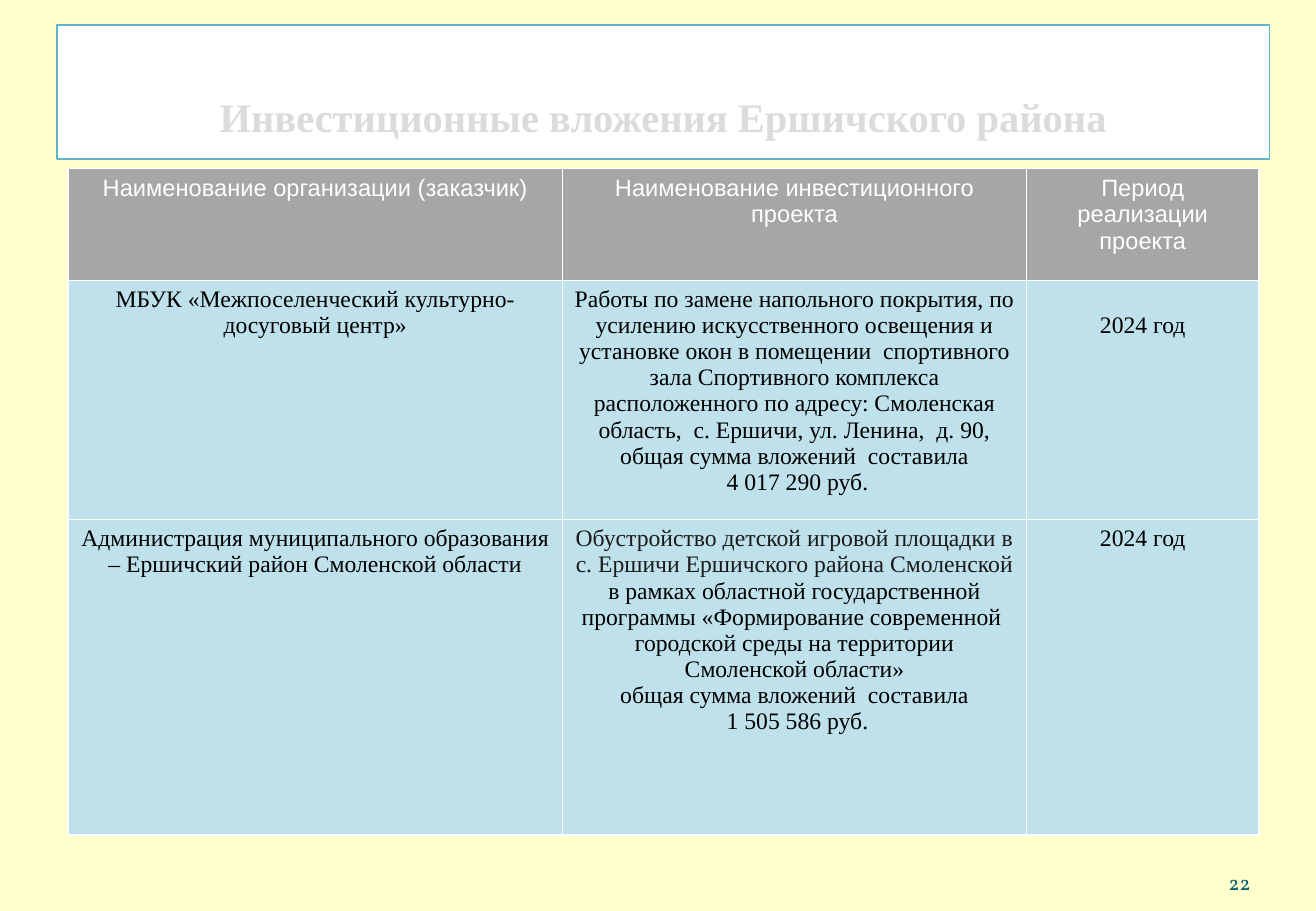
from dataclasses import dataclass

from lxml import etree
from pptx import Presentation
from pptx import util as u
from pptx.dml.color import RGBColor
from pptx.enum import shapes, text
from pptx.oxml import ns

COLORS = {
    "page": "FFFFCC",
    "white": "FFFFFF",
    "frame": "60B5CC",
    "title": "DBDBDD",
    "title_edge": "526080",
    "header": "A6A6A6",
    "body": "BFE1EB",
    "black": "000000",
    "soft_black": "1A1A1A",
    "number": "045D75",
}
SERIF = "Times New Roman"
COLUMNS = (10.34, 9.7, 4.86)
ROWS = (2.34, 4.9, 6.6)


@dataclass(frozen=True)
class Run:
    text: str
    color: str = "black"


@dataclass(frozen=True)
class Entry:
    paragraphs: tuple[tuple[Run, ...], ...]
    fill: str = "body"
    font: str = SERIF
    top: float = 0.13


def heading(label: str) -> Entry:
    return Entry(((Run(label, "white"),),), "header", "Arial")


def entry(*lines: str, top: float = 0.13) -> Entry:
    return Entry(tuple((Run(line),) for line in lines), top=top)


TABLE = (
    (
        heading("Наименование организации (заказчик)"),
        heading("Наименование инвестиционного проекта"),
        heading("Период реализации проекта"),
    ),
    (
        entry("МБУК «Межпоселенческий культурно-досуговый центр»"),
        entry(
            "Работы по замене напольного покрытия, по усилению искусственного "
            "освещения и установке окон в помещении  спортивного зала "
            "Спортивного комплекса расположенного по адресу: Смоленская "
            "область,  с. Ершичи, ул. Ленина,  д. 90, "
            "общая сумма вложений  составила",
            " 4 017 290 руб.",
        ),
        entry("2024 год", top=0.67),
    ),
    (
        entry("Администрация муниципального образования – Ершичский район Смоленской области"),
        Entry((
            (
                Run("Обустройство детской игровой площадки в с. Ершичи "
                    "Ершичского района Смоленской ", "soft_black"),
                Run("в рамках областной государственной программы «Формирование "
                    "современной  городской среды на территории Смоленской области»"),
            ),
            (Run("общая сумма вложений  составила"),),
            (Run(" 1 505 586 руб."),),
        )),
        entry("2024 год"),
    ),
)


def rgb(name: str) -> RGBColor:
    return RGBColor.from_string(COLORS[name])


def add_text(p, content: str, *, size: float = 14, font: str = SERIF,
             color: str = "black", bold: bool = False,
             align=text.PP_ALIGN.CENTER):
    p.alignment = align
    r = p.add_run()
    r.text = content
    r.font.size = u.Pt(size)
    r.font.name = font
    r.font.bold = bold
    r.font.color.rgb = rgb(color)
    return r


def make_line(tag: str, color: str, width: float):
    ln = etree.Element(ns.qn(tag), w=str(u.Pt(width)))
    fill = etree.SubElement(ln, ns.qn("a:solidFill"))
    etree.SubElement(fill, ns.qn("a:srgbClr"), val=COLORS[color])
    return ln


def set_margins(box, left: float, top: float, right: float, bottom: float) -> None:
    box.margin_left, box.margin_top = u.Cm(left), u.Cm(top)
    box.margin_right, box.margin_bottom = u.Cm(right), u.Cm(bottom)


def draw_title(s) -> None:
    sp = s.shapes.add_shape(shapes.MSO_SHAPE.RECTANGLE,
                            u.Cm(1.19), u.Cm(0.53), u.Cm(25.35), u.Cm(2.79))
    sp.shadow.inherit = False
    sp.fill.solid()
    sp.fill.fore_color.rgb = rgb("white")
    sp.line.color.rgb = rgb("frame")
    sp.line.width = u.Pt(1)
    tf = sp.text_frame
    tf.word_wrap = True
    tf.vertical_anchor = text.MSO_ANCHOR.BOTTOM
    set_margins(tf, 0.25, 0.13, 0.25, 0.37)
    r = add_text(tf.paragraphs[0], "Инвестиционные вложения Ершичского района",
                 size=24, color="title", bold=True)
    r.font._element.insert(0, make_line("a:ln", "title_edge", 1))


def fill_cell(cell, item: Entry) -> None:
    cell.fill.solid()
    cell.fill.fore_color.rgb = rgb(item.fill)
    set_margins(cell, 0.25, item.top, 0.25, 0.13)
    tf = cell.text_frame
    for i, runs in enumerate(item.paragraphs):
        p = tf.add_paragraph() if i else tf.paragraphs[0]
        for run in runs:
            add_text(p, run.text, font=item.font, color=run.color)
    props = cell._tc.get_or_add_tcPr()
    for i, side in enumerate("LRTB"):
        props.insert(i, make_line(f"a:ln{side}", "white", 1))


def draw_table(s) -> None:
    frame = s.shapes.add_table(len(ROWS), len(COLUMNS), u.Cm(1.42), u.Cm(3.52),
                               u.Cm(sum(COLUMNS)), u.Cm(sum(ROWS)))
    table = frame.table
    table.horz_banding = False
    for column, width in zip(table.columns, COLUMNS):
        column.width = u.Cm(width)
    for row, height, items in zip(table.rows, ROWS, TABLE):
        row.height = u.Cm(height)
        for cell, item in zip(row.cells, items):
            fill_cell(cell, item)


def draw_number(s) -> None:
    sp = s.shapes.add_textbox(u.Cm(23.85), u.Cm(17.81), u.Cm(2.29), u.Cm(1.02))
    tf = sp.text_frame
    tf.word_wrap = True
    tf.vertical_anchor = text.MSO_ANCHOR.BOTTOM
    set_margins(tf, 0, 0.13, 0, 0.13)
    add_text(tf.paragraphs[0], "22", size=12, font="Vollkorn", color="number",
             align=text.PP_ALIGN.RIGHT)


def main() -> None:
    prs = Presentation()
    prs.slide_width, prs.slide_height = u.Cm(27.51), u.Cm(19.05)
    s = prs.slides.add_slide(prs.slide_layouts[6])
    s.background.fill.solid()
    s.background.fill.fore_color.rgb = rgb("page")
    draw_title(s)
    draw_number(s)
    draw_table(s)
    prs.save("out.pptx")


if __name__ == "__main__":
    main()
